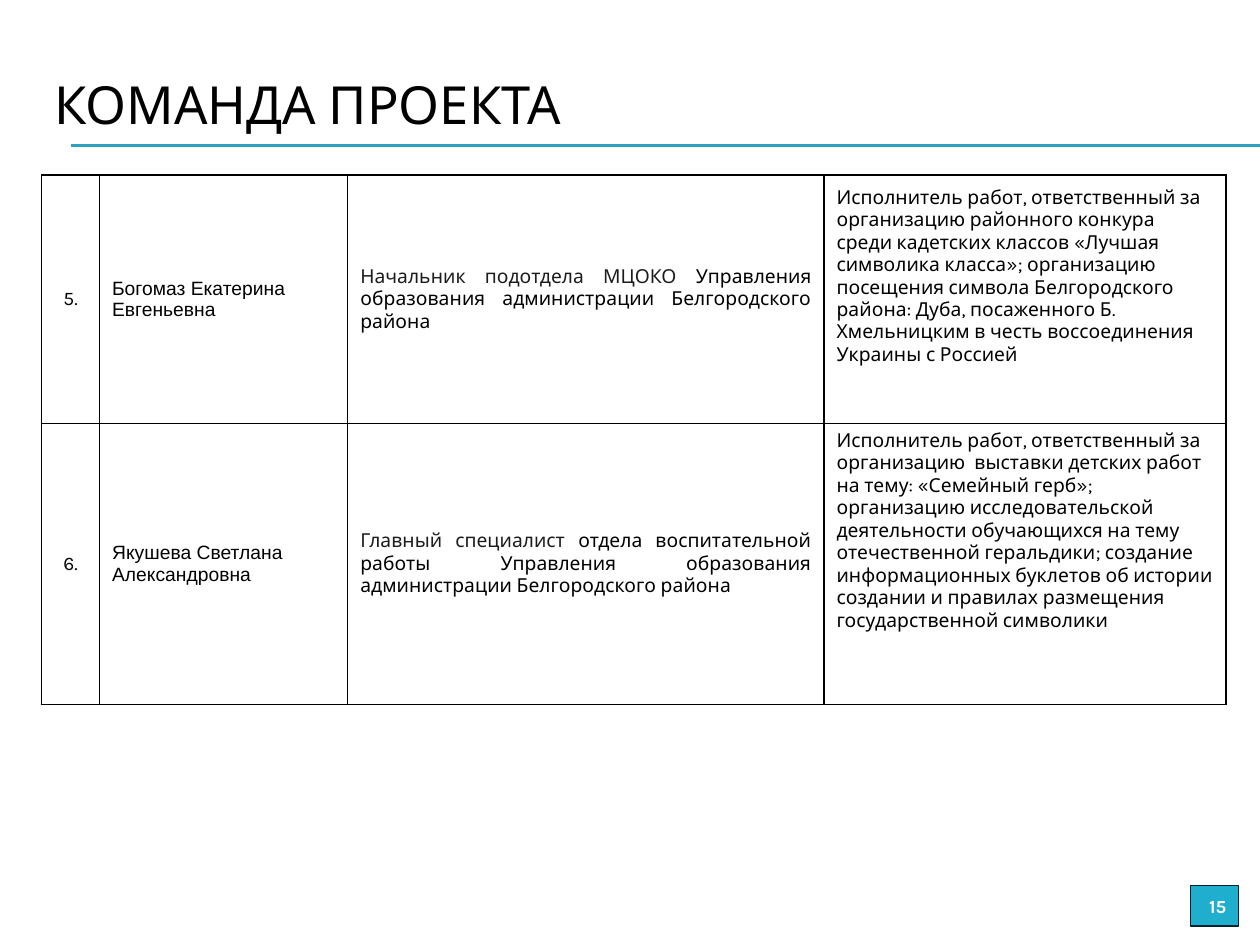
from pptx import Presentation
from pptx.dml.color import RGBColor
from pptx.enum import shapes, text
from pptx.oxml import parse_xml
from pptx.oxml.ns import nsdecls
from pptx.util import Inches, Pt

# Content
TITLE = "КОМАНДА ПРОЕКТА"
PAGE = "15"
TEAM = [
    ("5.", "Богомаз Екатерина Евгеньевна",
     ("Начальник подотдела МЦОКО ",
      "Управления образования администрации Белгородского района"),
     "Исполнитель работ, ответственный за организацию районного конкура среди "
     "кадетских классов «Лучшая символика класса»; организацию посещения символа "
     "Белгородского района: Дуба, посаженного Б. Хмельницким в честь "
     "воссоединения Украины с Россией"),
    ("6.", "Якушева Светлана Александровна",
     ("Главный специалист ",
      "отдела воспитательной работы Управления образования администрации "
      "Белгородского района"),
     "Исполнитель работ, ответственный за организацию  выставки детских работ на "
     "тему: «Семейный герб»; организацию исследовательской деятельности "
     "обучающихся на тему отечественной геральдики; создание информационных "
     "буклетов об истории создании и правилах размещения государственной символики"),
]

THEME = {
    "font": "Karla", "name_font": "Arial",
    "title": 30, "body": 11, "page": 10.5,
    "ink": "000000", "post": "1C1C1C", "rule": "2DA2BF",
    "badge": "1FAECD", "badge_line": "062329", "white": "FFFFFF",
}

# Layout
COLUMNS = (0.46, 1.97, 3.78, 3.19)
ROWS = (1.97, 2.23)
DUTY_TOPS = (0.09, 0.05)
RULES = (1.15, 1.16)
ALIGN = text.PP_ALIGN
ANCHOR = text.MSO_ANCHOR


def color(key):
    return RGBColor.from_string(THEME[key])


def add_run(paragraph, words, size="body", ink="ink", font="font", bold=False):
    run = paragraph.add_run()
    run.text = words
    run.font.name = THEME[font]
    run.font.size = Pt(THEME[size])
    run.font.bold = bold
    run.font.color.rgb = color(ink)


def add_borders(cell, widths):
    properties = cell._tc.get_or_add_tcPr()
    for place, (side, width) in enumerate(widths.items()):
        properties.insert(place, parse_xml(
            f'<a:{side} {nsdecls("a")} w="{Pt(width)}"><a:solidFill>'
            f'<a:srgbClr val="{THEME["ink"]}"/></a:solidFill></a:{side}>'))


prs = Presentation()
prs.slide_width, prs.slide_height = Inches(10), Inches(7.5)
slide = prs.slides.add_slide(prs.slide_layouts[5])

# Title
title = slide.shapes.title
title.left, title.top = Inches(0.33), Inches(0.36)
title.width, title.height = Inches(9.5), Inches(0.92)
title.text_frame.vertical_anchor = ANCHOR.MIDDLE
heading = title.text_frame.paragraphs[0]
heading.alignment = ALIGN.LEFT
add_run(heading, TITLE, "title")

# Double rule under the title
for y in RULES:
    rule = slide.shapes.add_connector(
        shapes.MSO_CONNECTOR.STRAIGHT, Inches(0.56), Inches(y), Inches(10), Inches(y))
    rule.line.color.rgb = color("rule")
    rule.line.width = Pt(0.75)
    rule._element.spPr.append(parse_xml(f'<a:effectLst {nsdecls("a")}/>'))

# Team table
team = slide.shapes.add_table(
    len(TEAM), len(COLUMNS), Inches(0.33), Inches(1.39),
    Inches(sum(COLUMNS)), Inches(sum(ROWS))).table
team.first_row = team.horz_banding = False
for column, width in zip(team.columns, COLUMNS):
    column.width = Inches(width)
for row, height in zip(team.rows, ROWS):
    row.height = Inches(height)

alignments = (ALIGN.CENTER, ALIGN.LEFT, ALIGN.JUSTIFY, ALIGN.LEFT)
for r, (number, name, (post, office), duty) in enumerate(TEAM):
    runs = (
        [(number, {})],
        [(name, {"font": "name_font"})],
        [(post, {"ink": "post"}), (office, {})],
        [(duty, {})],
    )
    for c, cell_runs in enumerate(runs):
        cell = team.cell(r, c)
        cell.fill.background()
        is_duty = c == len(COLUMNS) - 1
        cell.vertical_anchor = ANCHOR.TOP if is_duty else ANCHOR.MIDDLE
        cell.margin_left = cell.margin_right = Inches(0.1)
        cell.margin_top = Inches(DUTY_TOPS[r] if is_duty else 0.05)
        cell.margin_bottom = Inches(0.05)
        paragraph = cell.text_frame.paragraphs[0]
        paragraph.alignment = alignments[c]
        for words, style in cell_runs:
            add_run(paragraph, words, **style)
        # The line between number and name is thinner
        add_borders(cell, {"lnL": 0.5 if c == 1 else 1, "lnR": 0.5 if c == 0 else 1,
                           "lnT": 1, "lnB": 1})

# Page number
badge = slide.shapes.add_shape(
    shapes.MSO_SHAPE.RECTANGLE, Inches(9.45), Inches(7.03), Inches(0.38), Inches(0.32))
badge.shadow.inherit = False
badge.fill.solid()
badge.fill.fore_color.rgb = color("badge")
badge.line.color.rgb = color("badge_line")
badge.line.width = Pt(0.75)
badge.text_frame.word_wrap = True
badge.text_frame.margin_left = 0
badge.text_frame.vertical_anchor = ANCHOR.MIDDLE
page = badge.text_frame.paragraphs[0]
page.alignment = ALIGN.RIGHT
add_run(page, PAGE, "page", "white", bold=True)

prs.save("out.pptx")
